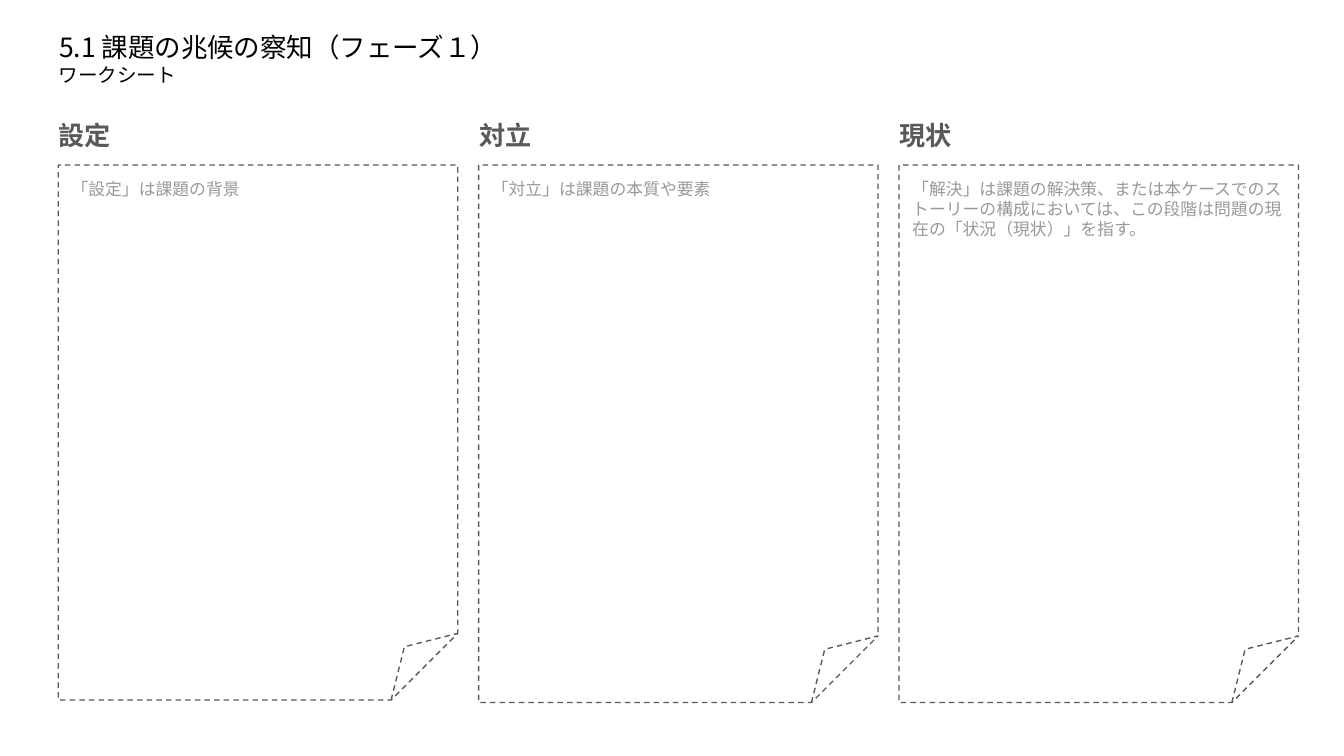
from lxml import etree
from pptx import Presentation
from pptx.dml.color import RGBColor
from pptx.enum.dml import MSO_LINE
from pptx.enum.shapes import MSO_SHAPE
from pptx.enum.text import MSO_ANCHOR, PP_ALIGN
from pptx.oxml.ns import qn
from pptx.util import Pt

FONT = "Noto Sans CJK JP"
BLACK = RGBColor(0x00, 0x00, 0x00)
DARK_GRAY = RGBColor(0x59, 0x59, 0x59)
LIGHT_GRAY = RGBColor(0x99, 0x99, 0x99)


def write_text(shape, text, size, color, bold=False):
    frame = shape.text_frame
    frame.word_wrap = True
    frame.vertical_anchor = MSO_ANCHOR.TOP
    frame.margin_left = frame.margin_right = Pt(7.2)
    frame.margin_top = frame.margin_bottom = Pt(7.2)
    para = frame.paragraphs[0]
    para.alignment = PP_ALIGN.LEFT
    span = para.add_run()
    span.text = text
    span.font.name = FONT
    span.font.size = Pt(size)
    span.font.bold = bold
    span.font.color.rgb = color
    # Japanese glyphs take the East Asian typeface
    latin = span.font._element.find(qn("a:latin"))
    east_asian = etree.Element(qn("a:ea"), typeface=FONT)
    latin.addnext(east_asian)


deck = Presentation()
deck.slide_width = Pt(720)
deck.slide_height = Pt(405)
page = deck.slides.add_slide(deck.slide_layouts[5])

# Title and subtitle
title = page.shapes.title
title.left, title.top, title.width, title.height = Pt(24.5), Pt(11.5), Pt(671), Pt(45.4)
write_text(title, "5.1 課題の兆候の察知（フェーズ１）", 14.2, BLACK)
subtitle = page.shapes.add_textbox(Pt(24.5), Pt(29.5), Pt(671), Pt(34.6))
write_text(subtitle, "ワークシート", 10.5, BLACK)
for box in (title, subtitle):
    box.text_frame.paragraphs[0].line_spacing = 0.9

# Three worksheet columns: heading above a folded sheet
columns = [
    ("設定", "「設定」は課題の背景", 286.6),
    ("対立", "「対立」は課題の本質や要素", 288),
    ("現状", "「解決」は課題の解決策、または本ケースでのストーリーの構成においては、"
     "この段階は問題の現在の「状況（現状）」を指す。", 288),
]
for index, (heading_text, hint, sheet_height) in enumerate(columns):
    left = 31.2 + index * 225.2
    sheet = page.shapes.add_shape(
        MSO_SHAPE.FOLDED_CORNER, Pt(left), Pt(88.4), Pt(214), Pt(sheet_height))
    sheet.shadow.inherit = False
    sheet.fill.background()
    sheet.line.color.rgb = DARK_GRAY
    sheet.line.width = Pt(0.75)
    sheet.line.dash_style = MSO_LINE.DASH
    write_text(sheet, hint, 9, LIGHT_GRAY)

    heading = page.shapes.add_textbox(Pt(left - 6.8), Pt(56.9), Pt(121), Pt(31.5))
    write_text(heading, heading_text, 14, DARK_GRAY, bold=True)

deck.save("out.pptx")
